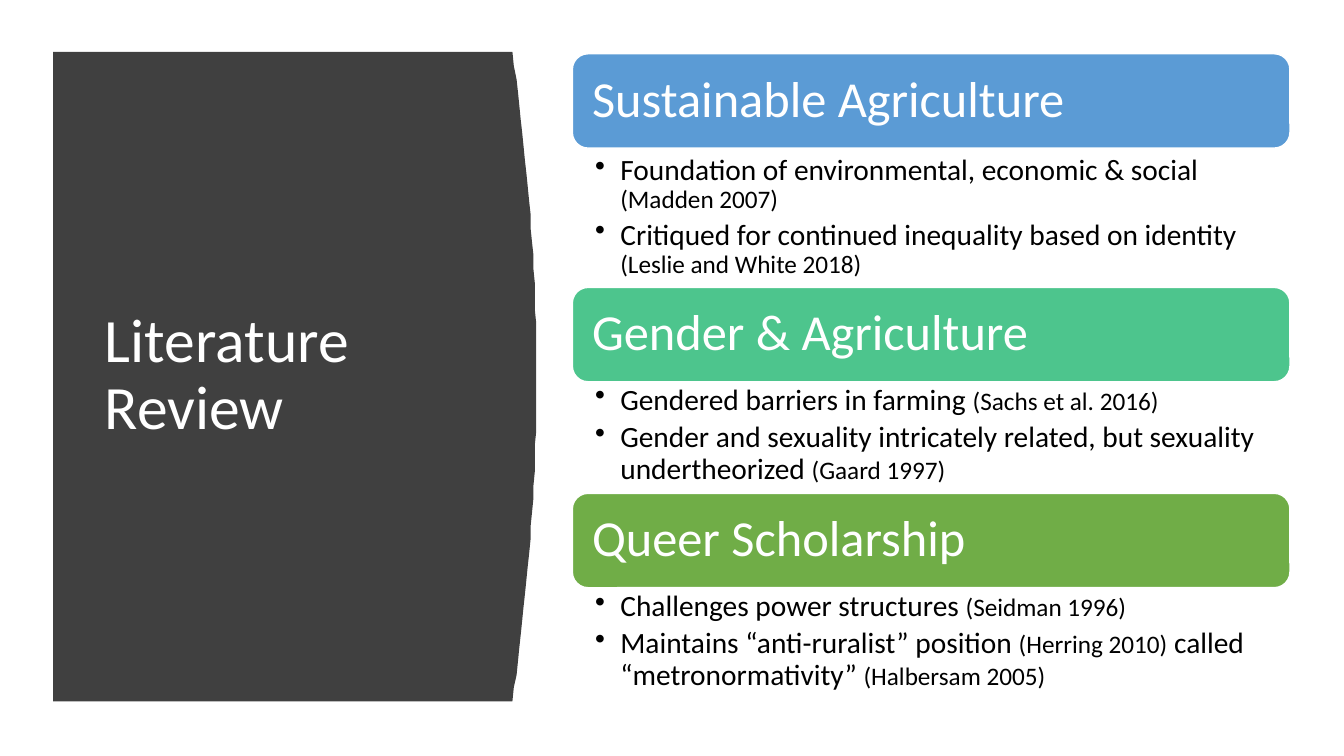
from lxml.etree import SubElement
from pptx import Presentation
from pptx.dml.color import RGBColor
from pptx.enum.shapes import MSO_SHAPE as Preset
from pptx.enum.text import MSO_ANCHOR as Anchor, PP_ALIGN as Align
from pptx.oxml.ns import qn
from pptx.util import Pt

WHITE = RGBColor(0xFF, 0xFF, 0xFF)
BLACK = RGBColor(0x00, 0x00, 0x00)
CHARCOAL = RGBColor(0x40, 0x40, 0x40)
BLUE = RGBColor(0x5B, 0x9B, 0xD5)
TEAL = RGBColor(0x4D, 0xC5, 0x8D)
GREEN = RGBColor(0x70, 0xAD, 0x47)

THEME_LEFT, THEME_WIDTH, HEADER_HEIGHT = 408.8, 512.6, 67.4

THEMES = [
    ("Sustainable Agriculture", BLUE, 38.4, 108.7, 96.6, [
        [("Foundation of environmental, economic & social ", 21), ("(Madden 2007)", 18)],
        [("Critiqued for continued inequality based on identity ", 21),
         ("(Leslie and White 2018)", 18)],
    ]),
    ("Gender & Agriculture", TEAL, 205.3, 272.7, 79.4, [
        [("Gendered barriers in farming ", 21), ("(Sachs et al. 2016)", 18)],
        [("Gender and sexuality intricately related, but sexuality undertheorized ", 21),
         ("(Gaard 1997)", 18)],
    ]),
    ("Queer Scholarship", GREEN, 352.4, 420.1, 79.4, [
        [("Challenges power structures ", 21), ("(Seidman 1996)", 18)],
        [("Maintains “anti-ruralist” position ", 21), ("(Herring 2010)", 18),
         (" called “metronormativity” ", 21), ("(Halbersam 2005)", 18)],
    ]),
]


class ReviewSlide:
    font_name = "Calibri"
    line_spacing = 0.9

    def __init__(self, deck):
        self.slide = deck.slides.add_slide(deck.slide_layouts[6])

    def apply(self, target, settings):
        for name, value in settings.items():
            setattr(target, name, value)

    def frame(self, shape, anchor, insets):
        left, top, right, bottom = map(Pt, insets)
        self.apply(shape.text_frame, {
            "word_wrap": True, "vertical_anchor": anchor,
            "margin_left": left, "margin_top": top,
            "margin_right": right, "margin_bottom": bottom,
        })
        return shape.text_frame

    def add_text(self, paragraph, runs, color, space_after=0):
        self.apply(paragraph, {
            "alignment": Align.LEFT, "line_spacing": self.line_spacing,
            "space_after": Pt(space_after),
        })
        for words, size in runs:
            run = paragraph.add_run()
            run.text = words
            self.apply(run.font, {"name": self.font_name, "size": Pt(size)})
            run.font.color.rgb = color

    def text_box(self, box, anchor, insets):
        return self.frame(self.slide.shapes.add_textbox(*map(Pt, box)), anchor, insets)

    def panel(self, left, top, edge, height, bulge, color, steps=48):
        half = height / 2
        curve = []
        for step in range(steps + 1):
            offset = 2 * step / steps - 1
            curve.append((edge + bulge * (1 - offset ** 2), top + half * (1 + offset)))
        outline = self.slide.shapes.build_freeform(left, top, scale=Pt(1))
        outline.add_line_segments(curve + [(left, top + height)], close=True)
        panel = outline.convert_to_shape()
        panel.shadow.inherit = False
        panel.fill.solid()
        panel.fill.fore_color.rgb = color
        panel.line.fill.background()

    def title(self, words, box):
        frame = self.text_box(box, Anchor.MIDDLE, (7.2, 3.6, 7.2, 3.6))
        self.add_text(frame.paragraphs[0], [(words, 44)], WHITE)

    def header(self, words, box, color):
        header = self.slide.shapes.add_shape(Preset.ROUNDED_RECTANGLE, *map(Pt, box))
        header.shadow.inherit = False
        header.fill.solid()
        header.fill.fore_color.rgb = color
        header.line.color.rgb = WHITE
        header.line.width = Pt(1)
        frame = self.frame(header, Anchor.MIDDLE, (10.8, 10.8, 10.8, 10.8))
        self.add_text(frame.paragraphs[0], [(words, 36)], WHITE)

    def bullets(self, points, box):
        frame = self.text_box(box, Anchor.TOP, (16.3, 2.2, 11.5, 2.2))
        for index, runs in enumerate(points):
            point = frame.add_paragraph() if index else frame.paragraphs[0]
            self.add_text(point, runs, BLACK, space_after=4)
            properties = point._p.get_or_add_pPr()
            properties.set("marL", str(Pt(18)))
            properties.set("indent", str(Pt(-18)))
            SubElement(properties, qn("a:buChar")).set("char", "•")


def main():
    deck = Presentation()
    deck.slide_width, deck.slide_height = Pt(960), Pt(540)
    review = ReviewSlide(deck)
    review.panel(38.2, 37.4, 365.8, 463.7, 17.3, CHARCOAL)
    review.title("Literature Review", (67.7, 79.9, 269.3, 377.3))
    for theme, color, header_top, points_top, points_height, points in THEMES:
        review.header(theme, (THEME_LEFT, header_top, THEME_WIDTH, HEADER_HEIGHT), color)
        review.bullets(points, (THEME_LEFT, points_top, THEME_WIDTH, points_height))
    deck.save("out.pptx")


if __name__ == "__main__":
    main()
